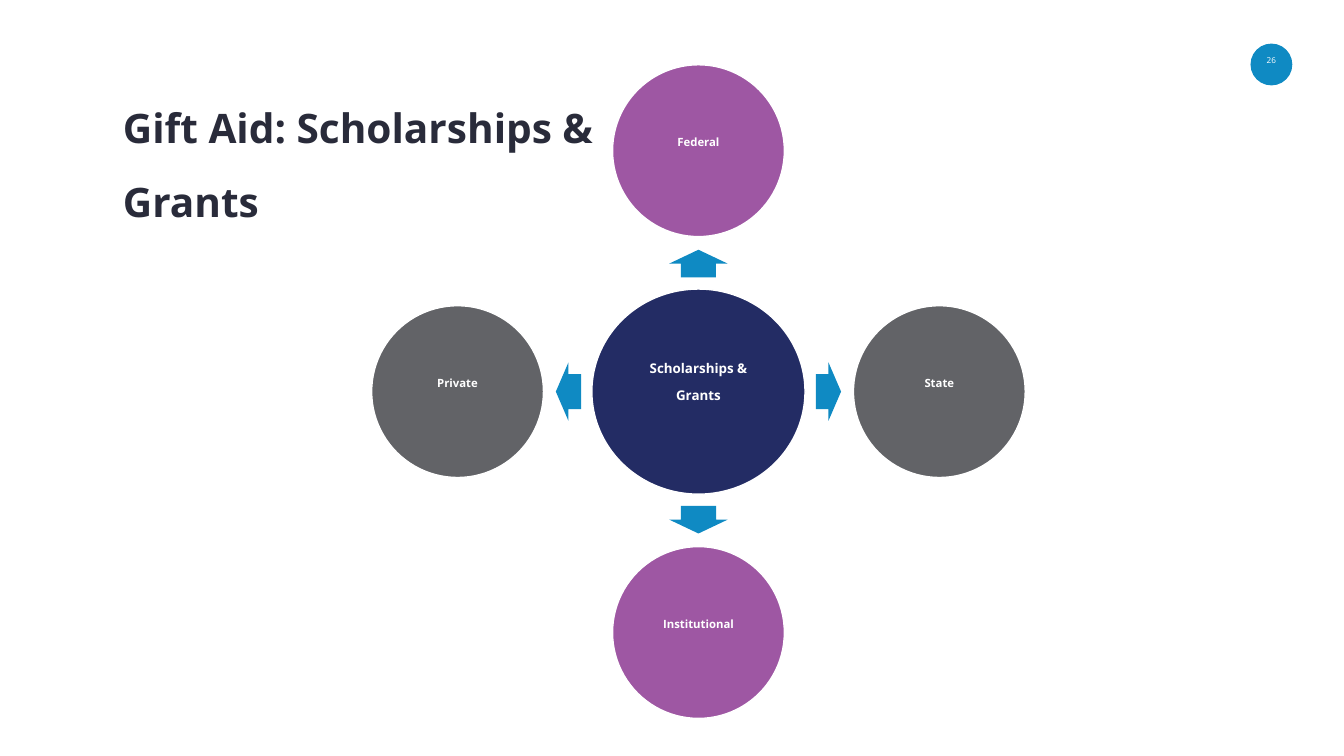
"""Build the Scholarships & Grants hub slide with four aid sources."""
from pptx import Presentation
from pptx.dml.color import RGBColor
from pptx.enum.shapes import MSO_SHAPE
from pptx.enum.text import MSO_ANCHOR, MSO_AUTO_SIZE, PP_ALIGN
from pptx.util import Inches, Pt

OVAL, ARROW = MSO_SHAPE.OVAL, MSO_SHAPE.RIGHT_ARROW
MIDDLE, NO_FIT = MSO_ANCHOR.MIDDLE, MSO_AUTO_SIZE.NONE
LEFT, CENTER = PP_ALIGN.LEFT, PP_ALIGN.CENTER

WHITE = RGBColor(0xFF, 0xFF, 0xFF)
INK = RGBColor(0x29, 0x2B, 0x3A)
BLUE = RGBColor(0x0F, 0x8A, 0xC3)
NAVY = RGBColor(0x23, 0x2C, 0x64)
PURPLE = RGBColor(0x9E, 0x57, 0xA3)
GRAY = RGBColor(0x62, 0x63, 0x67)

TITLE = "Gift Aid: Scholarships & Grants"
HUB = "Scholarships & Grants"
PAGE = "26"
SOURCES = [
    ("Federal", PURPLE, 0, -1, 270),
    ("State", GRAY, 1, 0, 0),
    ("Institutional", PURPLE, 0, 1, 90),
    ("Private", GRAY, -1, 0, 180),
]

HUB_X, HUB_Y = 13.86, 7.77
HUB_SIZE = (4.23, 4.07)
SOURCE_SIZE = (3.41, 3.41)
SOURCE_REACH = 4.78
ARROW_REACH_X, ARROW_REACH_Y = 2.58, 2.54
RAISED = "55000"


def write(shape, text, size, color, inset, align=CENTER, spacing=0.9, bold=True):
    frame = shape.text_frame
    frame.text = text
    layout = {"word_wrap": True, "auto_size": NO_FIT, "vertical_anchor": MIDDLE}
    for side in ("left", "top", "right", "bottom"):
        layout["margin_" + side] = Inches(inset)
    for name, value in layout.items():
        setattr(frame, name, value)
    paragraph = frame.paragraphs[0]
    for name, value in {"alignment": align, "line_spacing": spacing}.items():
        setattr(paragraph, name, value)
    font = paragraph.runs[0].font
    for name, value in {"name": "Open Sans", "size": Pt(size), "bold": bold}.items():
        setattr(font, name, value)
    font.color.rgb = color
    paragraph.runs[0]._r.get_or_add_rPr().set("baseline", RAISED)


def add_centered(slide, kind, x, y, size, fill, outlined=False):
    width, height = size
    shape = slide.shapes.add_shape(
        kind, Inches(x - width / 2), Inches(y - height / 2), Inches(width), Inches(height))
    shape.shadow.inherit = False
    shape.fill.solid()
    shape.fill.fore_color.rgb = fill
    if outlined:
        shape.line.color.rgb = WHITE
        shape.line.width = Pt(2)
    else:
        shape.line.fill.background()
    return shape


def main():
    deck = Presentation()
    deck.slide_width, deck.slide_height = Inches(26.67), Inches(15)
    slide = deck.slides.add_slide(deck.slide_layouts[5])

    page = add_centered(slide, OVAL, 25.23, 1.28, (0.83, 0.83), BLUE)
    write(page, PAGE, 20, WHITE, 0, spacing=1.0, bold=False)

    title = slide.shapes.title
    frame = {"left": 2.38, "top": 1.83, "width": 9.85, "height": 4.15}
    for name, value in frame.items():
        setattr(title, name, Inches(value))
    write(title, TITLE, 100, INK, 0.06, LEFT, 0.8)

    hub = add_centered(slide, OVAL, HUB_X, HUB_Y, HUB_SIZE, NAVY, True)
    write(hub, HUB, 33, WHITE, 0.05)

    for label, fill, dx, dy, angle in SOURCES:
        arrow = add_centered(
            slide, ARROW, HUB_X + dx * ARROW_REACH_X, HUB_Y + dy * ARROW_REACH_Y,
            (0.5 if dx else 0.55, 1.16), BLUE)
        arrow.rotation = angle
        arrow.adjustments[0], arrow.adjustments[1] = 0.6, 0.5
        source = add_centered(
            slide, OVAL, HUB_X + dx * SOURCE_REACH, HUB_Y + dy * SOURCE_REACH,
            SOURCE_SIZE, fill, True)
        write(source, label, 28, WHITE, 0.04)

    deck.save("out.pptx")


if __name__ == "__main__":
    main()
